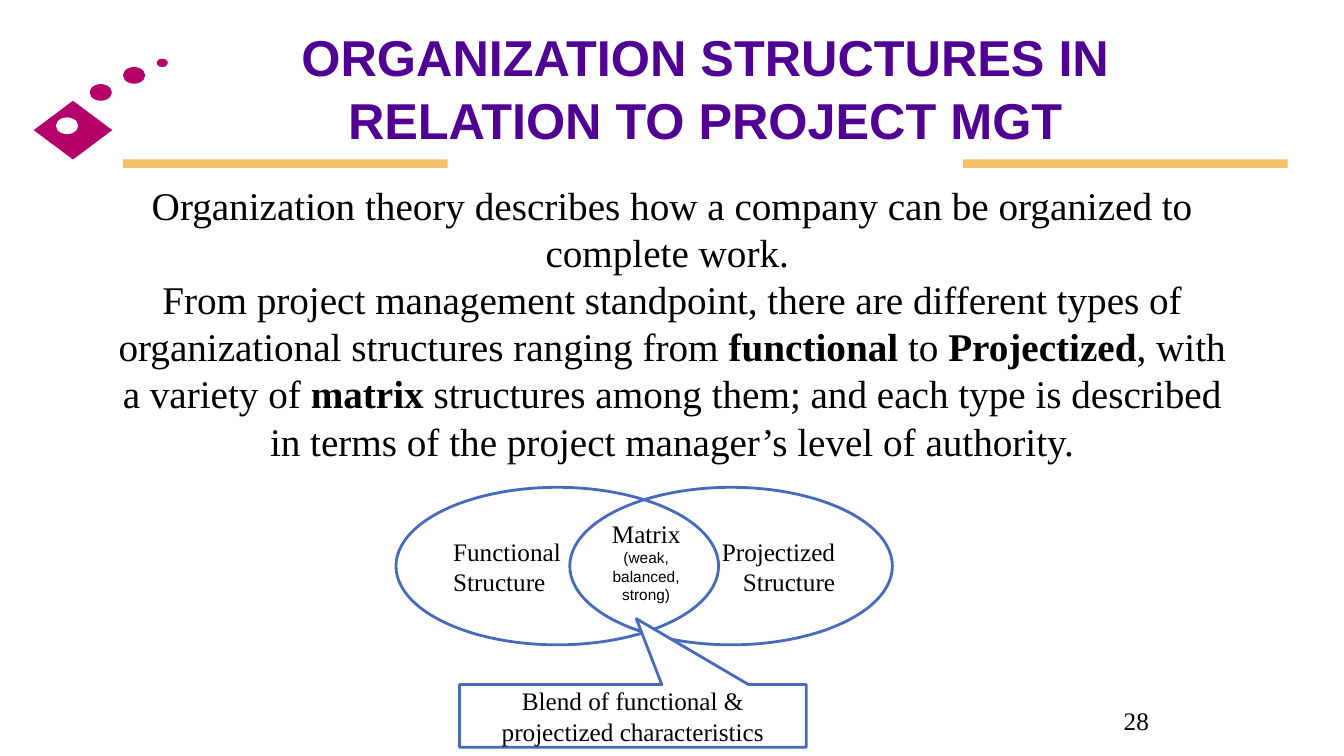
from pptx import Presentation
from pptx.dml.color import RGBColor
from pptx.enum.shapes import MSO_SHAPE as SHAPE
from pptx.enum.text import MSO_ANCHOR as ANCHOR, PP_ALIGN as ALIGN
from pptx.util import Cm, Pt

BLACK = RGBColor(0x00, 0x00, 0x00)
WHITE = RGBColor(0xFF, 0xFF, 0xFF)
PURPLE = RGBColor(0x50, 0x00, 0x93)
MAGENTA = RGBColor(0xB5, 0x00, 0x69)
GOLD = RGBColor(0xF6, 0xBF, 0x69)
BLUE = RGBColor(0x48, 0x6A, 0xBB)
SERIF, SANS = "Times New Roman", "Arial"


def write(sp, paragraphs, size=18, font=SERIF, color=BLACK, bold=False,
          align=ALIGN.CENTER, anchor=ANCHOR.MIDDLE, spacing=None):
    """Each paragraph is a list of runs: (text, format that differs)."""
    tf = sp.text_frame
    tf.word_wrap = True
    tf.vertical_anchor = anchor
    for i, runs in enumerate(paragraphs):
        p = tf.paragraphs[0] if i == 0 else tf.add_paragraph()
        p.alignment = align
        if spacing:
            p.line_spacing = spacing
        for text, own in runs:
            r = p.add_run()
            r.text = text
            r.font.size = Pt(own.get("size", size))
            r.font.name = own.get("font", font)
            r.font.bold = own.get("bold", bold)
            r.font.color.rgb = color


def add_shape(s, kind, box, fill=None, line=None):
    sp = s.shapes.add_shape(kind, *map(Cm, box))
    sp.shadow.inherit = False
    if fill is None:
        sp.fill.background()
    else:
        sp.fill.solid()
        sp.fill.fore_color.rgb = fill
    if line is None:
        sp.line.fill.background()
    else:
        sp.line.color.rgb = line
        sp.line.width = Pt(2)
    return sp


def add_text(s, box, paragraphs, **fmt):
    write(s.shapes.add_textbox(*map(Cm, box)), paragraphs, **fmt)


def add_decoration(s):
    for x in (3.1, 24.27):
        add_shape(s, SHAPE.RECTANGLE, (x, 4.02, 8.18, 0.21), GOLD)
    add_shape(s, SHAPE.DIAMOND, (0.85, 2.54, 1.98, 1.48), MAGENTA)
    dots = [(1.41, 2.96, 0.56, 0.42, WHITE), (2.26, 2.12, 0.56, 0.42, MAGENTA),
            (3.1, 1.69, 0.56, 0.42, MAGENTA), (3.95, 1.48, 0.28, 0.21, MAGENTA)]
    for *box, color in dots:
        add_shape(s, SHAPE.OVAL, box, color)


def add_venn(s):
    circles = [(9.98, [[("Functional", {})], [("Structure", {})]], ALIGN.LEFT),
               (14.36, [[("Projectized Structure", {})]], ALIGN.RIGHT)]
    for x, paragraphs, align in circles:
        sp = add_shape(s, SHAPE.OVAL, (x, 12.28, 8.13, 3.97), line=BLUE)
        write(sp, paragraphs, align=align)
    add_text(s, (14.99, 12.93, 2.59, 2.44),
             [[("Matrix ", {}),
               ("(weak, balanced, strong)", {"size": 11, "font": SANS})]],
             anchor=ANCHOR.TOP)

    # Callout pointing into the overlap
    sp = add_shape(s, SHAPE.RECTANGULAR_CALLOUT, (11.58, 17.25, 8.74, 1.58),
                   WHITE, BLUE)
    sp.adjustments[0] = 0.01
    sp.adjustments[1] = -1.55
    write(sp, [[("Blend of functional & projectized characteristics", {})]])


def main():
    prs = Presentation()
    prs.slide_width, prs.slide_height = Cm(33.87), Cm(19.05)
    s = prs.slides.add_slide(prs.slide_layouts[6])
    add_decoration(s)

    # Title
    add_text(s, (5.93, 0.64, 23.7, 3.1),
             [[("ORGANIZATION STRUCTURES IN RELATION TO PROJECT MGT", {})]],
             size=36, font=SANS, color=PURPLE, bold=True, spacing=1.04)

    # Body
    strong = {"bold": True}
    add_text(s, (2.44, 4.45, 29, 7.44), [
        [("Organization theory describes how a company can be organized "
          "to complete work. ", {})],
        [("From project management standpoint, there are different types of "
          "organizational structures ranging from ", {}),
         ("functional", strong), (" to ", {}), ("Projectized", strong),
         (", with a variety of ", {}), ("matrix", strong),
         (" structures among them; and each type is described in terms of "
          "the project manager’s level of authority.", {})],
    ], size=28, anchor=ANCHOR.TOP)

    add_venn(s)

    # Slide number
    add_text(s, (28.07, 17.65, 1.55, 1.02), [[("28", {})]],
             align=ALIGN.LEFT, anchor=ANCHOR.TOP)
    prs.save("out.pptx")


if __name__ == "__main__":
    main()
